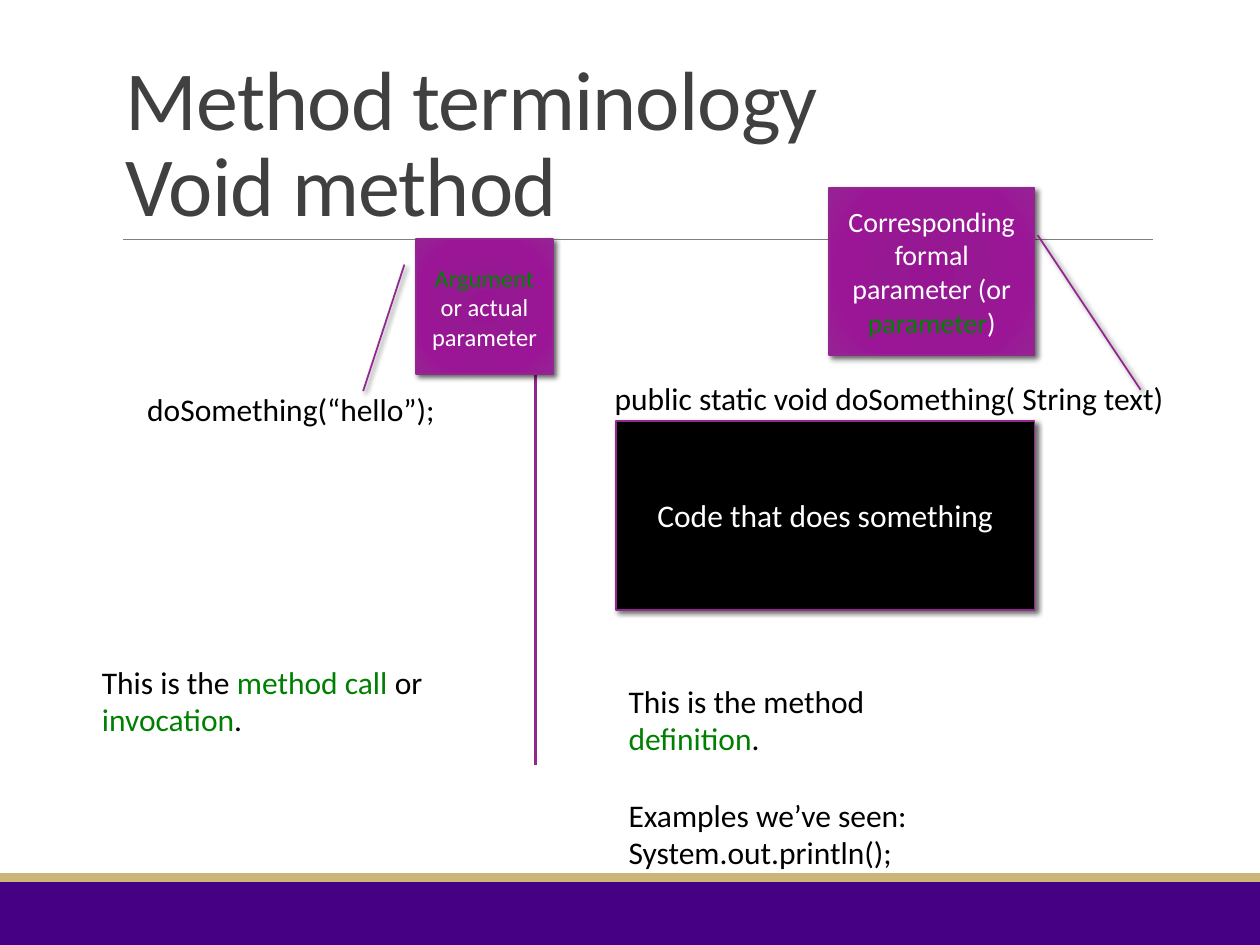
"""Build the slide on method terminology for a void method."""
from lxml.etree import SubElement, fromstring
from pptx import Presentation
from pptx.dml.color import RGBColor
from pptx.enum.shapes import MSO_CONNECTOR, MSO_SHAPE
from pptx.enum.text import MSO_ANCHOR, MSO_AUTO_SIZE, PP_ALIGN
from pptx.oxml.ns import nsdecls, qn
from pptx.util import Inches, Pt

COLORS = {
    "purple": "450084", "gold": "CBB677", "rule": "808080", "title": "404040",
    "black": "000000", "white": "FFFFFF", "green": "008000", "accent": "92278F",
}
GRADIENT = {0: "971593", 34: "961892", 70: "9B1697", 100: "972294"}


def write_text(shape, paragraphs, size, frame_format, paragraph_format):
    frame = shape.text_frame
    for name, value in frame_format.items():
        setattr(frame, name, value)
    for index, pieces in enumerate(paragraphs):
        paragraph = frame.add_paragraph() if index else frame.paragraphs[0]
        for name, value in paragraph_format.items():
            setattr(paragraph, name, value)
        for text, color in pieces:
            run = paragraph.add_run()
            run.text = text
            font_format = {"name": "Calibri", "size": Pt(size)}
            for name, value in font_format.items():
                setattr(run.font, name, value)
            run.font.color.rgb = RGBColor.from_string(COLORS[color])
    return frame


def add_shadow(shape):
    shape.shadow.inherit = False
    effects = shape._element.spPr.find(qn("a:effectLst"))
    shadow = SubElement(effects, qn("a:outerShdw"), blurRad=str(Pt(3)), dist=str(Pt(2)),
                        dir="2700000", algn="tl", rotWithShape="0")
    color = SubElement(shadow, qn("a:srgbClr"), val=COLORS["black"])
    SubElement(color, qn("a:alpha"), val="60000")


presentation = Presentation()
presentation.slide_width = Inches(10)
presentation.slide_height = Inches(7.5)
slide = presentation.slides.add_slide(presentation.slide_layouts[6])

for top, height, color in [(7, 0.5, "purple"), (6.93, 0.07, "gold")]:
    band = slide.shapes.add_shape(
        MSO_SHAPE.RECTANGLE, Inches(0), Inches(top), Inches(10), Inches(height))
    band.shadow.inherit = False
    band.fill.solid()
    band.fill.fore_color.rgb = RGBColor.from_string(COLORS[color])
    band.line.fill.background()

for start_x, start_y, end_x, end_y, color, width in [
    (0.98, 1.9, 9.15, 1.9, "rule", 0.5),
    (4.25, 2.4, 4.25, 6.07, "accent", 1.25),
]:
    line = slide.shapes.add_connector(
        MSO_CONNECTOR.STRAIGHT, Inches(start_x), Inches(start_y), Inches(end_x), Inches(end_y))
    line.line.color.rgb = RGBColor.from_string(COLORS[color])
    line.line.width = Pt(width)
    SubElement(line._element.spPr, qn("a:effectLst"))

title = slide.shapes.add_textbox(Inches(0.9), Inches(0.31), Inches(8.25), Inches(1.59))
title_frame = write_text(
    title, [[("Method terminology", "title")], [("Void method", "title")]], 48,
    {"word_wrap": True, "vertical_anchor": MSO_ANCHOR.BOTTOM}, {"line_spacing": 0.85})
for paragraph in title_frame.paragraphs:
    for run in paragraph.runs:
        run.font._element.set("spc", "-50")

centered_frame = {"word_wrap": True, "vertical_anchor": MSO_ANCHOR.MIDDLE}
centered_paragraph = {"alignment": PP_ALIGN.CENTER}

code = slide.shapes.add_shape(
    MSO_SHAPE.RECTANGLE, Inches(4.89), Inches(3.34), Inches(3.32), Inches(1.5))
code.fill.solid()
code.fill.fore_color.rgb = RGBColor.from_string(COLORS["black"])
code.line.color.rgb = RGBColor.from_string(COLORS["accent"])
code.line.width = Pt(1)
add_shadow(code)
write_text(code, [[("Code that does something", "white")]], 18,
           centered_frame, centered_paragraph)

notes = [
    (4.78, 2.96, 4.62, 0.4, False,
     [[("public static void doSomething( String text)", "black")]]),
    (1.07, 3.05, 2.51, 0.4, False, [[("doSomething(“hello”);", "black")]]),
    (0.71, 5.21, 3.11, 0.71, True,
     [[("This is the ", "black"), ("method call ", "green"), ("or ", "black"),
       ("invocation", "green"), (".", "black")]]),
    (4.89, 5.36, 3.11, 1.62, True,
     [[("This is the method ", "black"), ("definition", "green"), (".", "black")],
      [("Examples we’ve seen:", "black")],
      [("System.out.println();", "black")]]),
]
for left, top, width, height, wrap, paragraphs in notes:
    note = slide.shapes.add_textbox(Inches(left), Inches(top), Inches(width), Inches(height))
    note_frame = write_text(
        note, paragraphs, 18,
        {"word_wrap": wrap, "auto_size": MSO_AUTO_SIZE.SHAPE_TO_FIT_TEXT}, {})
note_frame.paragraphs[1].space_before = Pt(22)

callouts = [
    (3.3, 1.9, 1.09, 1.07, 14, [],
     [("Argument", "green"), (" or actual parameter", "white")]),
    (6.58, 1.49, 1.63, 1.33, 16, [0.283, 1.016, 1.206, 1.517],
     [("Corresponding formal parameter (or ", "white"), ("parameter", "green"),
      (")", "white")]),
]
stops = "".join(
    f'<a:gs pos="{position * 1000}"><a:srgbClr val="{color}"/></a:gs>'
    for position, color in GRADIENT.items())
for left, top, width, height, size, adjustments, pieces in callouts:
    callout = slide.shapes.add_shape(
        MSO_SHAPE.LINE_CALLOUT_1, Inches(left), Inches(top), Inches(width), Inches(height))
    for index, value in enumerate(adjustments):
        callout.adjustments[index] = value
    callout.line.color.rgb = RGBColor.from_string(COLORS["accent"])
    callout.line.width = Pt(1)
    callout._element.spPr.find(qn("a:prstGeom")).addnext(fromstring(
        f'<a:gradFill {nsdecls("a")} rotWithShape="1"><a:gsLst>{stops}</a:gsLst>'
        '<a:path path="circle"><a:fillToRect l="50000" t="50000" r="50000" b="50000"/>'
        '</a:path></a:gradFill>'))
    add_shadow(callout)
    write_text(callout, [pieces], size, centered_frame, centered_paragraph)

presentation.save("out.pptx")
